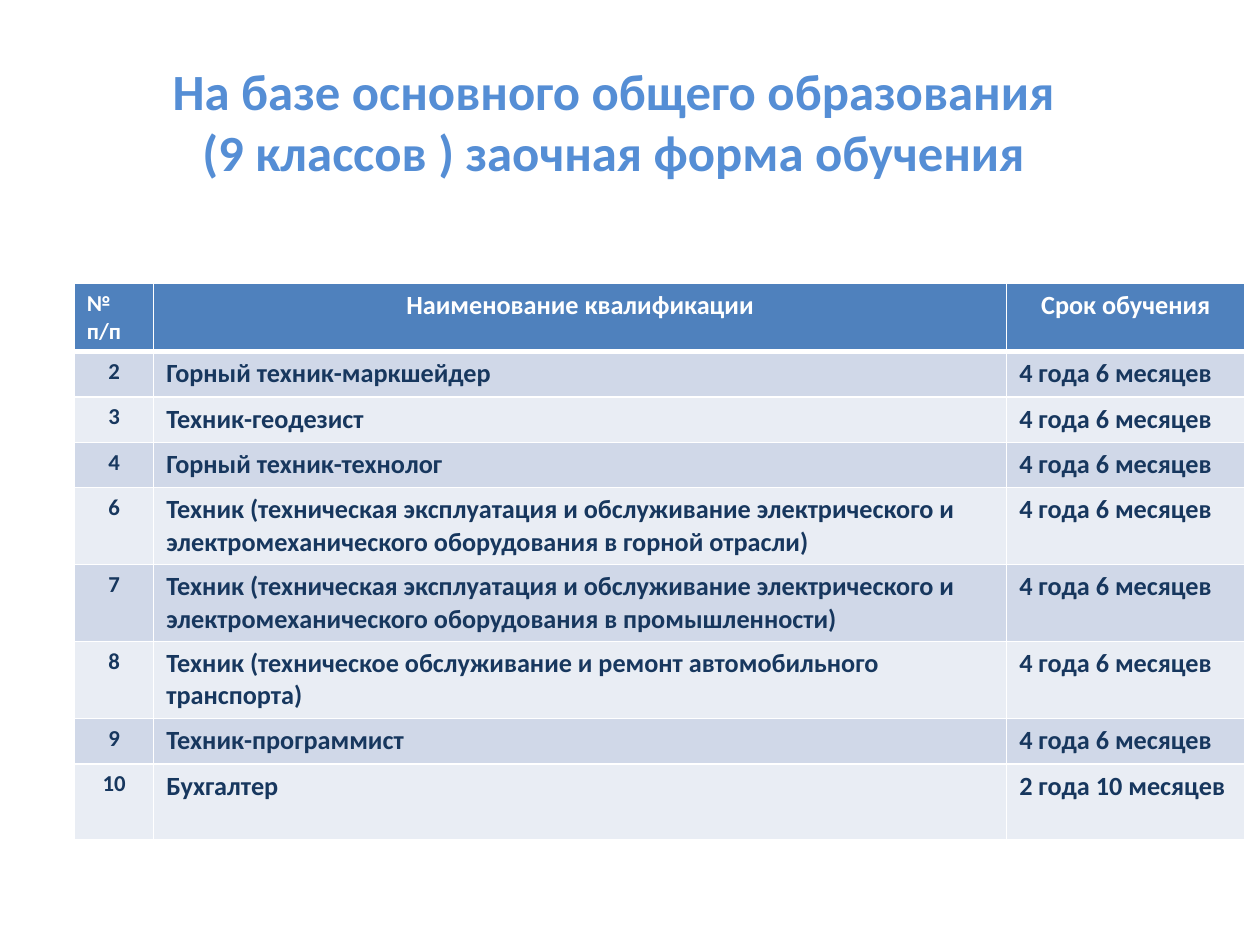
"""Build a slide listing the part-time study qualifications and their terms."""
from lxml.etree import SubElement
from pptx import Presentation
from pptx.dml.color import RGBColor
from pptx.enum.text import MSO_ANCHOR, PP_ALIGN
from pptx.oxml.ns import qn
from pptx.util import Inches, Pt

THEME = {
    "font": "Calibri",
    "title": "558ED5",
    "header": "4F81BD",
    "bands": ("D0D8E8", "E9EDF4"),
    "text": "17375E",
    "white": "FFFFFF",
    "title_size": 29,
    "number_size": 13,
    "body_size": 15,
    "line": 1,
    "header_line": 3,
}
HEADERS = ("№ п/п", "Наименование квалификации", "Срок обучения")
USUAL_TERM = "4 года 6 месяцев"
EQUIPMENT = "Техник (техническая эксплуатация и обслуживание электрического и электромеханического оборудования в "
QUALIFICATIONS = (
    ("2", "Горный техник-маркшейдер", USUAL_TERM),
    ("3", "Техник-геодезист", USUAL_TERM),
    ("4", "Горный техник-технолог", USUAL_TERM),
    ("6", EQUIPMENT + "горной отрасли)", USUAL_TERM),
    ("7", EQUIPMENT + "промышленности)", USUAL_TERM),
    ("8", "Техник (техническое обслуживание и ремонт автомобильного транспорта)", USUAL_TERM),
    ("9", "Техник-программист", USUAL_TERM),
    ("10", "Бухгалтер", "2 года 10 месяцев"),
)
COLUMN_WIDTHS = (0.63, 6.77, 1.89)
ROW_HEIGHTS = (0.53, 0.36, 0.36, 0.36, 0.61, 0.61, 0.61, 0.36, 0.6)


def format_paragraph(paragraph, size, color, alignment):
    paragraph.alignment = alignment
    for run in paragraph.runs:
        font_format = {"name": THEME["font"], "size": Pt(size), "bold": True}
        for attribute, value in font_format.items():
            setattr(run.font, attribute, value)
        run.font.color.rgb = RGBColor.from_string(color)


def add_borders(cell, widths):
    properties = cell._tc.get_or_add_tcPr()
    for side, width in widths.items():
        line = SubElement(properties, qn(f"a:ln{side}"), w=str(Pt(width)))
        fill = SubElement(line, qn("a:solidFill"))
        SubElement(fill, qn("a:srgbClr"), val=THEME["white"])


presentation = Presentation()
presentation.slide_width = Inches(10)
presentation.slide_height = Inches(7.5)
slide = presentation.slides.add_slide(presentation.slide_layouts[5])

title = slide.shapes.title
title_format = {"left": 0.67, "top": 0.29, "width": 8.5, "height": 1.34}
for attribute, value in title_format.items():
    setattr(title, attribute, Inches(value))
title.text_frame.text = "На базе основного общего образования \v(9 классов ) заочная форма обучения "
title.text_frame.vertical_anchor = MSO_ANCHOR.MIDDLE
title_paragraph = title.text_frame.paragraphs[0]
format_paragraph(title_paragraph, THEME["title_size"], THEME["title"], PP_ALIGN.CENTER)
for line_break in title_paragraph._p.findall(qn("a:br")):
    SubElement(line_break, qn("a:rPr"), sz=str(THEME["title_size"] * 100))

rows = (HEADERS, *QUALIFICATIONS)
table = slide.shapes.add_table(
    len(rows), len(HEADERS), Inches(0.59), Inches(2.25),
    Inches(sum(COLUMN_WIDTHS)), Inches(sum(ROW_HEIGHTS)),
).table
for column, width in zip(table.columns, COLUMN_WIDTHS):
    column.width = Inches(width)
for row, height in zip(table.rows, ROW_HEIGHTS):
    row.height = Inches(height)

for row_index, values in enumerate(rows):
    is_header = row_index == 0
    fill_color = THEME["header"] if is_header else THEME["bands"][(row_index - 1) % 2]
    text_color = THEME["white"] if is_header else THEME["text"]
    top_line = THEME["header_line"] if row_index == 1 else THEME["line"]
    bottom_line = THEME["header_line"] if is_header else THEME["line"]
    for column_index, value in enumerate(values):
        is_number = column_index == 0
        cell = table.cell(row_index, column_index)
        cell.text = value
        size = THEME["number_size"] if is_number else THEME["body_size"]
        alignment = PP_ALIGN.CENTER if is_header != is_number else PP_ALIGN.LEFT
        format_paragraph(cell.text_frame.paragraphs[0], size, text_color, alignment)
        add_borders(cell, {"L": THEME["line"], "R": THEME["line"], "T": top_line, "B": bottom_line})
        cell.fill.solid()
        cell.fill.fore_color.rgb = RGBColor.from_string(fill_color)

presentation.save("out.pptx")
